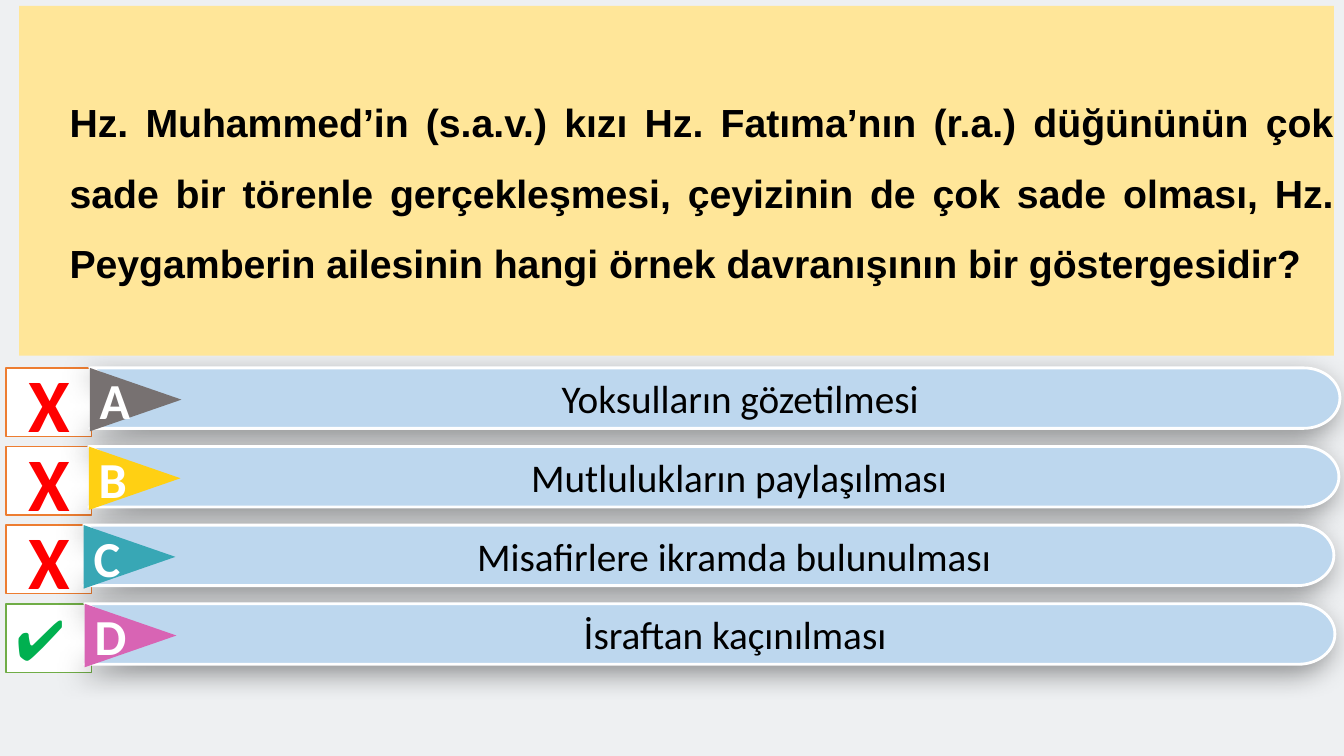
"""Builds a quiz slide with one question and four marked answers."""
from lxml import etree
from pptx import Presentation
from pptx import util as u
from pptx.dml.color import RGBColor
from pptx.enum import shapes, text
from pptx.oxml.ns import qn

QUESTION = (
    "Hz. Muhammed’in (s.a.v.) kızı Hz. Fatıma’nın (r.a.) düğününün çok sade bir "
    "törenle gerçekleşmesi, çeyizinin de çok sade olması, Hz. Peygamberin ailesinin "
    "hangi örnek davranışının bir göstergesidir?"
)
ANSWERS = [
    ("A", "Yoksulların gözetilmesi", "777171", 0.89, False),
    ("B", "Mutlulukların paylaşılması", "FFD013", 0.88, False),
    ("C", "Misafirlere ikramda bulunulması", "38A7B5", 0.83, False),
    ("D", "İsraftan kaçınılması", "D864B4", 0.84, True),
]
TOP, PITCH = 3.65, 0.78
MARK_X, MARK_W, MARK_H = 0.06, 0.85, 0.68
BAR_W, BAR_H, NOTCH, CAP = 12.4, 0.6, 0.62, 0.36
ROUND = 0.55
TAG_W, TAG_H = 0.63, 0.91
INDENT = 0.5
LETTER = {"size": u.Pt(36), "name": "Calibri", "bold": True}
ANSWER = {"size": u.Pt(28), "name": "Calibri"}
ASK = {"size": u.Pt(28), "name": "Arial", "bold": True}
RIGHT = {"size": u.Pt(40), "name": "Calibri"}
WRONG = {"size": u.Pt(54), "name": "Calibri", "bold": True}


def rgb(value):
    """Turn a hex string into a colour."""
    return RGBColor.from_string(value)


def paint(sp, fill, line=None, width=1):
    """Give a shape its fill and outline and no shadow."""
    sp.shadow.inherit = False
    sp.fill.solid()
    sp.fill.fore_color.rgb = rgb(fill)
    if line:
        sp.line.color.rgb = rgb(line)
        sp.line.width = u.Pt(width)
    else:
        sp.line.fill.background()


def write(sp, words, font, color, align="CENTER", indent=0):
    """Put one formatted paragraph in a shape."""
    tf = sp.text_frame
    tf.word_wrap = True
    tf.vertical_anchor = text.MSO_ANCHOR.MIDDLE
    p = tf.paragraphs[0]
    p.alignment = getattr(text.PP_ALIGN, align)
    if indent:
        p._p.get_or_add_pPr().set("marL", str(u.Inches(indent)))
    r = p.add_run()
    r.text = words
    for key, value in font.items():
        setattr(r.font, key, value)
    r.font.color.rgb = rgb(color)
    return p


def add_shape(parent, kind, *box):
    """Add a preset shape at a box given in inches."""
    return parent.add_shape(kind, *(u.Inches(n) for n in box))


def bend_line(line, controls):
    """Turn a straight path segment into a curve with two control points."""
    line.tag = qn("a:cubicBezTo")
    for i, (x, y) in enumerate(controls):
        point = etree.Element(qn("a:pt"), x=str(u.Inches(x)), y=str(u.Inches(y)))
        line.insert(i, point)


def add_bar(parent, x, y):
    """Add an answer bar with a notched left and a rounded right end."""
    middle, bend = BAR_H / 2, BAR_W - CAP
    points = [(bend, 0), (BAR_W, middle), (bend, BAR_H), (0, BAR_H), (NOTCH, middle)]
    builder = parent.build_freeform(u.Inches(x), u.Inches(y))
    builder.add_line_segments([(u.Inches(x + a), u.Inches(y + b)) for a, b in points],
                              close=True)
    sp = builder.convert_to_shape()
    lines = list(sp._element.iter(qn("a:lnTo")))
    over, side = bend + ROUND * CAP, ROUND * middle
    bend_line(lines[1], [(over, 0), (BAR_W, middle - side)])
    bend_line(lines[2], [(BAR_W, middle + side), (over, BAR_H)])
    return sp


def cast_shadow(sp):
    """Add a soft shadow to the lower left."""
    effects = sp._element.spPr.find(qn("a:effectLst"))
    shadow = etree.SubElement(effects, qn("a:outerShdw"), blurRad=str(u.Pt(20)),
                              dist=str(u.Pt(7)), dir=str(135 * 60000), rotWithShape="0")
    color = etree.SubElement(shadow, qn("a:srgbClr"), val="000000")
    etree.SubElement(color, qn("a:alpha"), val="40000")


def add_mark(parent, y, correct):
    """Add the box that shows whether an answer is right."""
    sp = add_shape(parent, shapes.MSO_SHAPE.RECTANGLE, MARK_X, y, MARK_W, MARK_H)
    paint(sp, "FFFFFF", "70AD47" if correct else "ED7D31")
    if correct:
        write(sp, "✔", RIGHT, "00B050", "LEFT")
    else:
        write(sp, "X", WRONG, "FF0000")


def add_answer(parent, letter, words, color, x, y):
    """Add a group of an answer bar and its letter tag."""
    group = parent.add_group_shape().shapes
    bar = add_bar(group, x, y)
    paint(bar, "BDD7EE", "FFFFFF", 2)
    cast_shadow(bar)
    write(bar, words, ANSWER, "000000", indent=INDENT)
    tag = add_shape(group, shapes.MSO_SHAPE.ISOSCELES_TRIANGLE,
                    x + (TAG_H - TAG_W) / 2, y + (TAG_W - TAG_H) / 2, TAG_W, TAG_H)
    tag.rotation = 90
    paint(tag, color)
    write(tag, letter, LETTER, "FFFFFF")
    tag.text_frame._txBody.bodyPr.set("vert", "vert270")


def add_question(parent):
    """Add the question panel."""
    sp = add_shape(parent, shapes.MSO_SHAPE.RECTANGLE, 0.19, 0.06, 13.04, 3.47)
    paint(sp, "FFE699")
    for side in ("left", "top", "right", "bottom"):
        setattr(sp.text_frame, f"margin_{side}", 0)
    write(sp, QUESTION, ASK, "000000", "JUSTIFY", INDENT).line_spacing = 1.5


def main():
    """Build and save the slide."""
    prs = Presentation()
    prs.slide_width, prs.slide_height = u.Inches(13.33), u.Inches(7.5)
    s = prs.slides.add_slide(prs.slide_layouts[6])
    s.background.fill.solid()
    s.background.fill.fore_color.rgb = rgb("EEF0F2")
    rows = [(TOP + i * PITCH, *answer) for i, answer in enumerate(ANSWERS)]
    for y, *_, correct in reversed(rows):
        add_mark(s.shapes, y, correct)
    for y, letter, words, color, x, _ in rows:
        add_answer(s.shapes, letter, words, color, x, y)
    add_question(s.shapes)
    prs.save("out.pptx")


if __name__ == "__main__":
    main()
